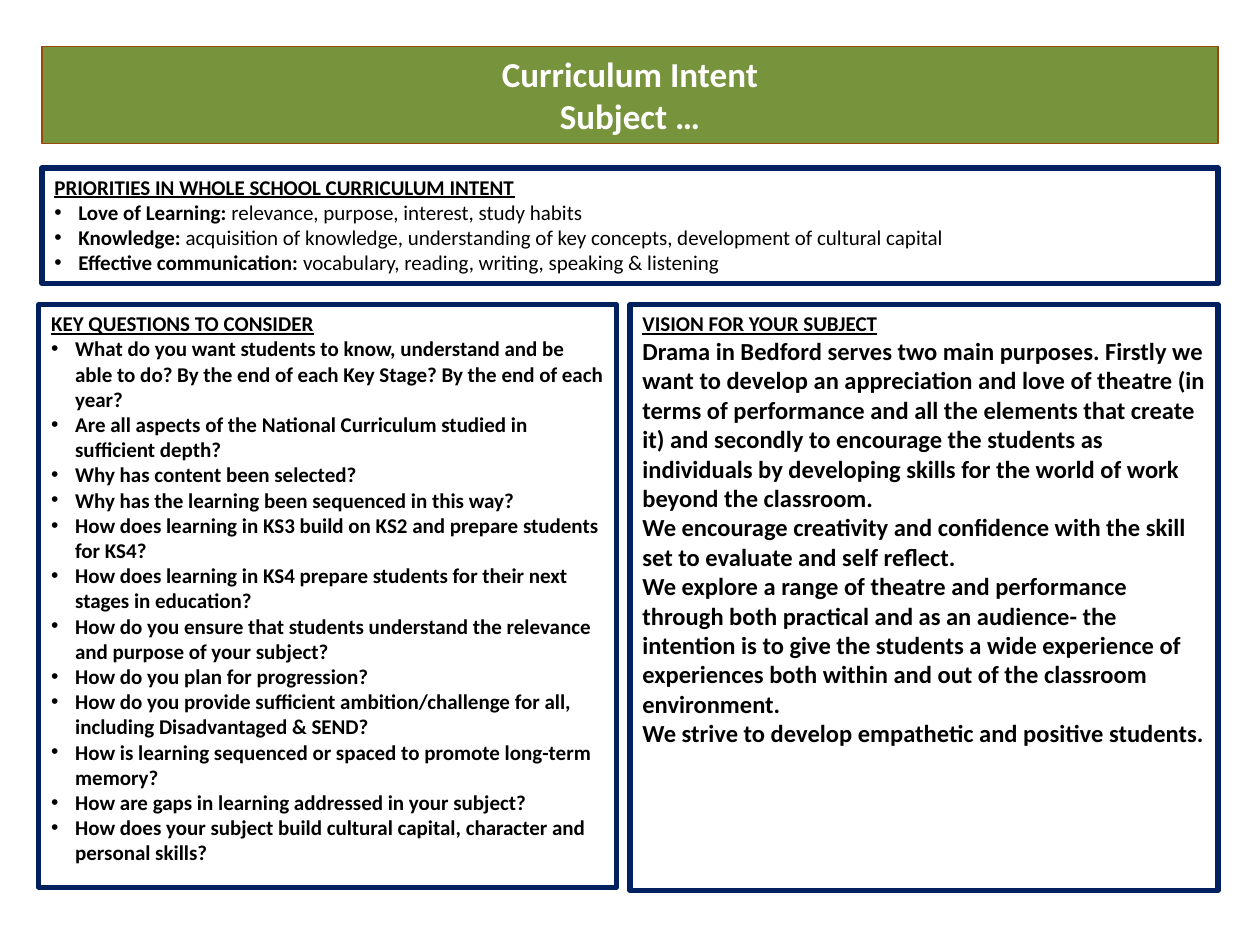
import pptx
import pptx.dml.color
import pptx.enum.shapes
import pptx.enum.text
import pptx.oxml
import pptx.util

COLORS = {"green": "77933C", "rust": "984807", "navy": "002060", "white": "FFFFFF", "black": "000000"}
WIDE, HIGH = pptx.util.Inches(10), pptx.util.Inches(7.5)
COLS, ROWS = 120, 90
FONT = "Calibri"
INDENT = pptx.util.Inches(0.19)

GOALS = [
    ("Love of Learning: ", "relevance, purpose, interest, study habits"),
    ("Knowledge: ", "acquisition of knowledge, understanding of key concepts, development of cultural capital"),
    ("Effective communication: ", "vocabulary, reading, writing, speaking & listening"),
]
QUESTIONS = [
    "What do you want students to know, understand and be able to do? "
    "By the end of each Key Stage? By the end of each year?",
    "Are all aspects of the National Curriculum studied in sufficient depth?",
    "Why has content been selected?",
    "Why has the learning been sequenced in this way?",
    "How does learning in KS3 build on KS2 and prepare students for KS4?",
    "How does learning in KS4 prepare students for their next stages in education?",
    "How do you ensure that students understand the relevance and purpose of your subject?",
    "How do you plan for progression?",
    "How do you provide sufficient ambition/challenge for all, including Disadvantaged & SEND?",
    "How is learning sequenced or spaced to promote long-term memory?",
    "How are gaps in learning addressed in your subject?",
    "How does your subject build cultural capital, character and personal skills?",
]
VISION = [
    "Drama in Bedford serves two main purposes. Firstly we want to develop an appreciation and love "
    "of theatre (in terms of performance and all the elements that create it) and secondly to encourage "
    "the students as individuals by developing skills for the world of work beyond the classroom.",
    "We encourage creativity and confidence with the skill set to evaluate and self reflect.",
    "We explore a range of theatre and performance through both practical and as an audience- the "
    "intention is to give the students a wide experience of experiences both within and out of the "
    "classroom environment.",
    "We strive to develop empathetic and positive students.",
]


def color(name):
    """Return the named colour."""
    return pptx.dml.color.RGBColor.from_string(COLORS[name])


def style(run, size, tint="black", bold=True, under=False):
    """Set the font of a run."""
    font = run.font
    font.name, font.size, font.bold, font.underline = FONT, pptx.util.Pt(size), bold, under
    font.color.rgb = color(tint)


def box(slide, col, row, cols, rows, fill, line, weight):
    """Add a rectangle on the grid and return its text frame."""
    shape = slide.shapes.add_shape(
        pptx.enum.shapes.MSO_SHAPE.RECTANGLE,
        round(WIDE * col / COLS), round(HIGH * row / ROWS),
        round(WIDE * cols / COLS), round(HIGH * rows / ROWS))
    shape.shadow.inherit = False
    shape.fill.solid()
    shape.fill.fore_color.rgb = color(fill)
    shape.line.color.rgb = color(line)
    shape.line.width = pptx.util.Pt(weight)
    frame = shape.text_frame
    frame.word_wrap = True
    frame.vertical_anchor = pptx.enum.text.MSO_ANCHOR.TOP
    return frame


def bullet(para):
    """Give a paragraph a hanging bullet."""
    props = para._p.get_or_add_pPr()
    props.set("marL", str(INDENT))
    props.set("indent", str(-INDENT))
    for tag, key, value in (("buFont", "typeface", "Arial"), ("buChar", "char", "•")):
        mark = pptx.oxml.xmlchemy.OxmlElement("a:" + tag)
        mark.set(key, value)
        props.append(mark)


def banner(slide, text):
    """Add the title band."""
    frame = box(slide, 4, 4.4, 112, 9.3, "green", "rust", 0.75)
    frame.text = text
    for para in frame.paragraphs:
        para.alignment = pptx.enum.text.PP_ALIGN.CENTER
        style(para.runs[0], 20, "white")


def panel(slide, place, head, items, size=12, marked=True):
    """Add a framed panel with a heading and paragraphs of bold and plain text."""
    frame = box(slide, *place, "white", "navy", 3)
    frame.text = head
    style(frame.paragraphs[0].runs[0], 12, under=True)
    for strong, plain in items:
        para = frame.add_paragraph()
        para.text = strong
        style(para.runs[0], size)
        if plain:
            run = para.add_run()
            run.text = plain
            style(run, size, bold=False)
        if marked:
            bullet(para)
    for para in frame.paragraphs:
        para.alignment = pptx.enum.text.PP_ALIGN.LEFT


def main():
    """Build and save the slide."""
    deck = pptx.Presentation()
    deck.slide_width, deck.slide_height = WIDE, HIGH
    slide = deck.slides.add_slide(deck.slide_layouts[6])
    banner(slide, "Curriculum Intent\nSubject …")
    panel(slide, (4, 16, 112, 11), "PRIORITIES IN WHOLE SCHOOL CURRICULUM INTENT", GOALS)
    panel(slide, (3.7, 29, 55, 55.5), "KEY QUESTIONS TO CONSIDER", [(text, "") for text in QUESTIONS])
    panel(slide, (60, 29, 56, 55.8), "VISION FOR YOUR SUBJECT", [(text, "") for text in VISION], 14, False)
    deck.save("out.pptx")


if __name__ == "__main__":
    main()
